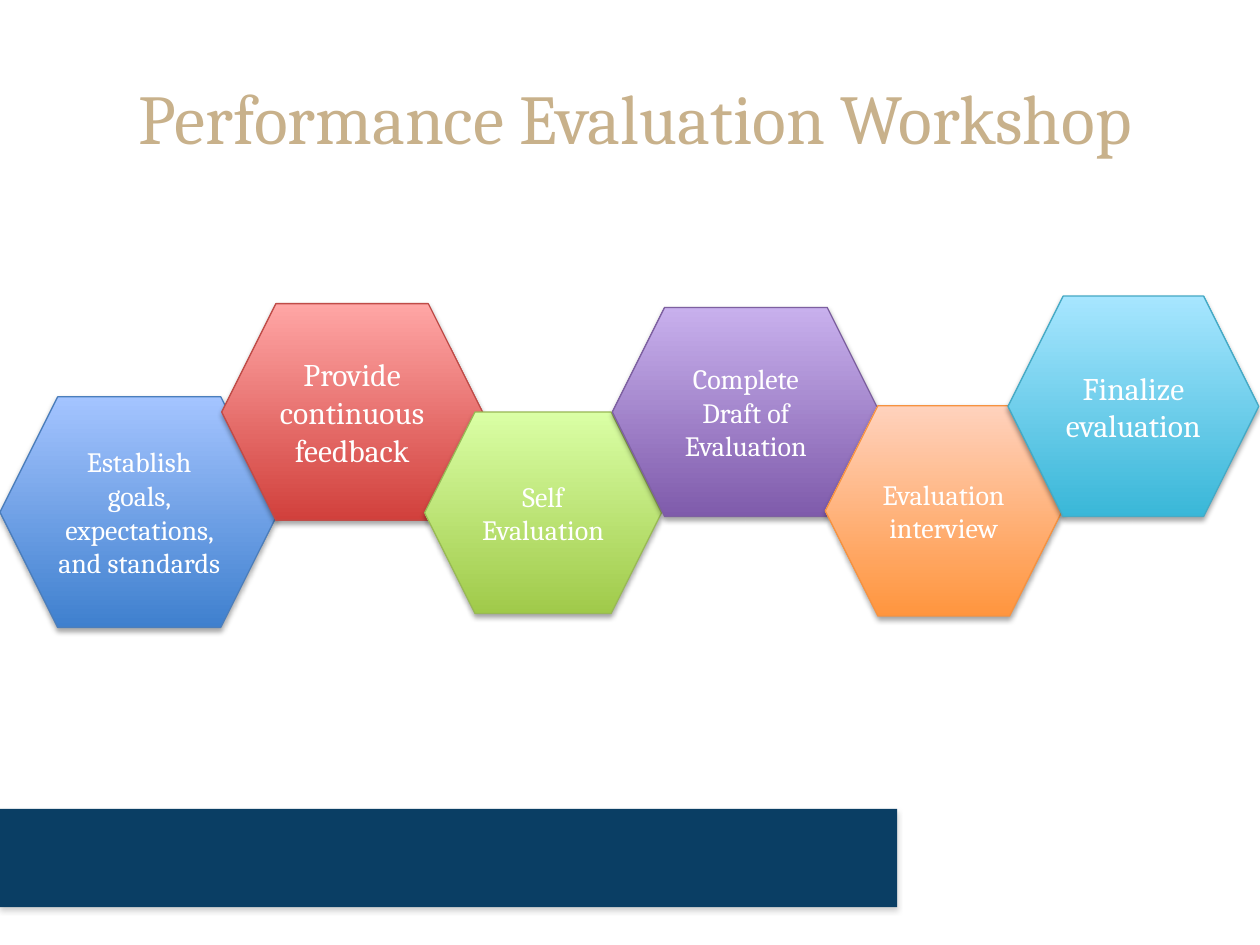
from dataclasses import dataclass

import pptx
import pptx.dml.color
import pptx.enum.shapes
import pptx.enum.text
import pptx.oxml
import pptx.oxml.ns
import pptx.util

Inches = pptx.util.Inches
Pt = pptx.util.Pt
RGBColor = pptx.dml.color.RGBColor
MSO_SHAPE = pptx.enum.shapes.MSO_SHAPE
PP_ALIGN = pptx.enum.text.PP_ALIGN

FONT = "Cambria"
WHITE = RGBColor(0xFF, 0xFF, 0xFF)
BLACK = RGBColor(0x00, 0x00, 0x00)
GRAY = RGBColor(0x80, 0x80, 0x80)
NAVY = RGBColor(0x0A, 0x3E, 0x64)
TAN = RGBColor(0xC8, 0xB1, 0x8B)


@dataclass(frozen=True)
class Palette:
    bottom: RGBColor
    top: RGBColor
    edge: RGBColor


BLUE = Palette(RGBColor(0x3F, 0x80, 0xCE), RGBColor(0xA4, 0xC4, 0xFF), RGBColor(0x4B, 0x7E, 0xBC))
RED = Palette(RGBColor(0xD1, 0x40, 0x3C), RGBColor(0xFF, 0xA6, 0xA5), RGBColor(0xBF, 0x4C, 0x48))
GREEN = Palette(RGBColor(0xA0, 0xCA, 0x4A), RGBColor(0xDA, 0xFF, 0xA5), RGBColor(0x98, 0xB9, 0x55))
PURPLE = Palette(RGBColor(0x7F, 0x5B, 0xAB), RGBColor(0xC8, 0xB0, 0xED), RGBColor(0x7D, 0x60, 0xA0))
ORANGE = Palette(RGBColor(0xFF, 0x95, 0x3E), RGBColor(0xFF, 0xD2, 0xBD), RGBColor(0xF6, 0x92, 0x40))
AQUA = Palette(RGBColor(0x39, 0xB7, 0xD8), RGBColor(0xA7, 0xE6, 0xFF), RGBColor(0x46, 0xAA, 0xC5))


@dataclass(frozen=True)
class Step:
    text: str
    left: float
    top: float
    width: float
    height: float
    palette: Palette
    size: int = 16


STEPS = [
    Step("Establish goals, expectations, and standards", 0, 3.15, 2.21, 1.83, BLUE),
    Step("Provide continuous feedback", 1.76, 2.41, 2.07, 1.72, RED, size=18),
    Step("Self Evaluation", 3.37, 3.27, 1.88, 1.6, GREEN),
    Step("Complete Draft of Evaluation", 4.86, 2.44, 2.12, 1.66, PURPLE),
    Step("Evaluation interview", 6.55, 3.22, 1.88, 1.67, ORANGE),
    Step("Finalize evaluation", 8, 2.35, 1.99, 1.75, AQUA, size=18),
]


def write_text(shape, text: str, *, size: int, color: RGBColor, align: PP_ALIGN) -> None:
    frame = shape.text_frame
    frame.text = text
    frame.word_wrap = True
    frame.vertical_anchor = pptx.enum.text.MSO_ANCHOR.MIDDLE
    paragraph = frame.paragraphs[0]
    paragraph.alignment = align
    font = paragraph.runs[0].font
    font.name = FONT
    font.size = Pt(size)
    font.color.rgb = color


def add_drop_shadow(shape, color: RGBColor) -> None:
    """Cast a soft 35% shadow straight down."""
    shape.shadow.inherit = False
    effects = shape._element.spPr.find(pptx.oxml.ns.qn("a:effectLst"))
    effects.append(pptx.oxml.parse_xml(
        f'<a:outerShdw {pptx.oxml.ns.nsdecls("a")} blurRad="{Pt(3.1)}" dist="{Pt(1.8)}" '
        f'dir="5400000" rotWithShape="0"><a:srgbClr val="{color}">'
        '<a:alpha val="35000"/></a:srgbClr></a:outerShdw>'
    ))


def add_footer_band(slide) -> None:
    band = slide.shapes.add_shape(
        MSO_SHAPE.RECTANGLE, Inches(0), Inches(6.42), Inches(7.12), Inches(0.78))
    band.fill.solid()
    band.fill.fore_color.rgb = NAVY
    band.line.fill.background()
    add_drop_shadow(band, GRAY)


def add_step(slide, step: Step) -> None:
    hexagon = slide.shapes.add_shape(
        MSO_SHAPE.HEXAGON, Inches(step.left), Inches(step.top),
        Inches(step.width), Inches(step.height))
    hexagon.fill.gradient()
    hexagon.fill.gradient_angle = 90
    stops = hexagon.fill.gradient_stops
    for stop, color in zip(stops, (step.palette.bottom, step.palette.top)):
        stop.color.rgb = color
    hexagon.line.color.rgb = step.palette.edge
    hexagon.line.width = Pt(0.75)
    add_drop_shadow(hexagon, BLACK)
    write_text(hexagon, step.text, size=step.size, color=WHITE, align=PP_ALIGN.CENTER)


def main() -> None:
    deck = pptx.Presentation()
    deck.slide_width, deck.slide_height = Inches(10), Inches(7.5)
    slide = deck.slides.add_slide(deck.slide_layouts[5])

    title = slide.shapes.title
    title.left, title.top = Inches(1), Inches(0.3)
    title.width, title.height = Inches(8.5), Inches(1.25)
    write_text(title, "Performance Evaluation Workshop", size=40, color=TAN, align=PP_ALIGN.LEFT)

    add_footer_band(slide)
    for step in STEPS:
        add_step(slide, step)
    deck.save("out.pptx")


if __name__ == "__main__":
    main()
